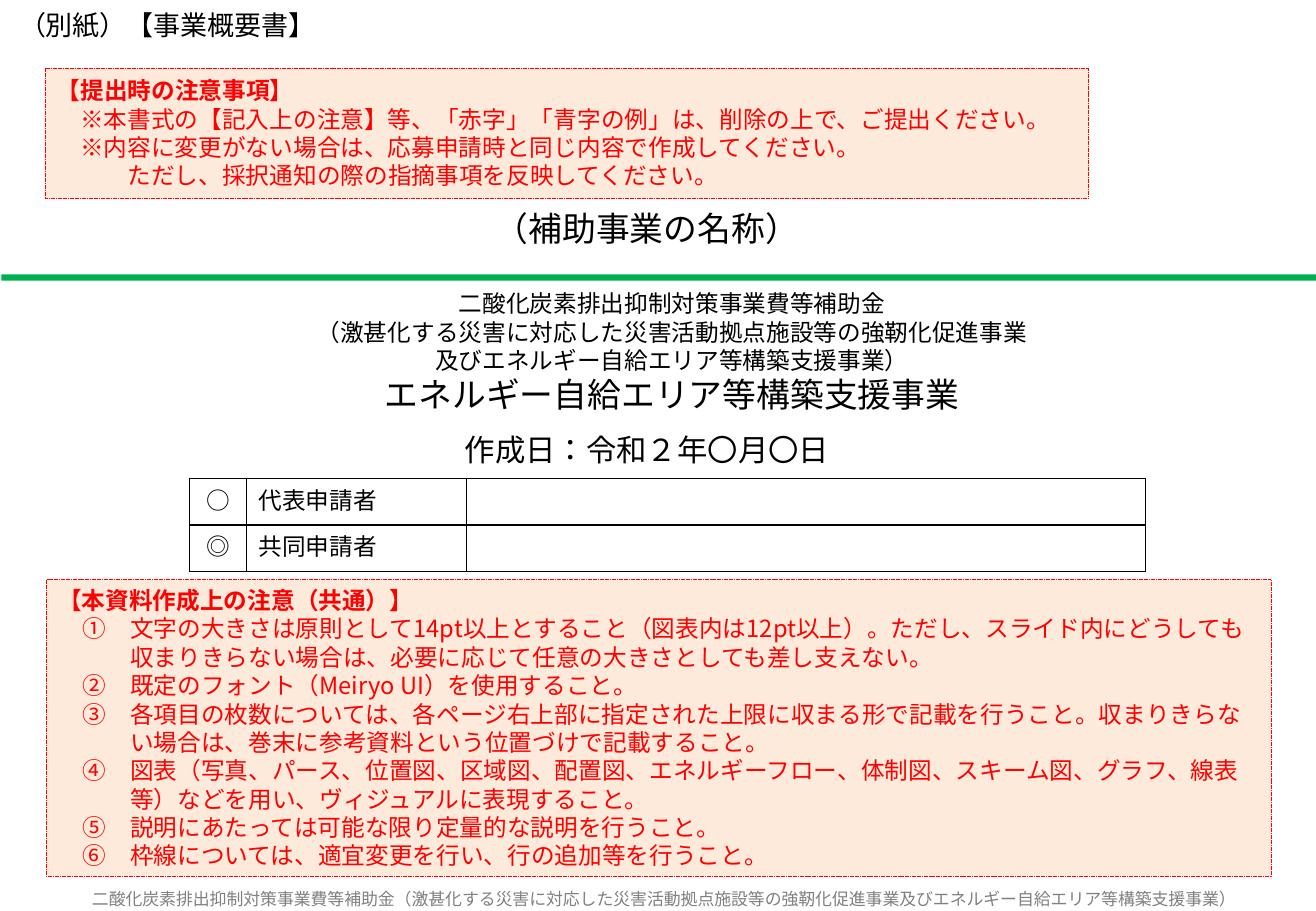
from dataclasses import dataclass

import pptx
import pptx.dml.color
import pptx.enum.dml
import pptx.enum.lang
import pptx.enum.shapes
import pptx.enum.text
import pptx.oxml.ns
import pptx.util
from lxml import etree

Cm = pptx.util.Cm
Pt = pptx.util.Pt
PP_ALIGN = pptx.enum.text.PP_ALIGN
MSO_ANCHOR = pptx.enum.text.MSO_ANCHOR
MSO_SHAPE = pptx.enum.shapes.MSO_SHAPE
qn = pptx.oxml.ns.qn

FONT = "Noto Sans CJK JP"
LINE_HEIGHT = 1.2
BLACK, RED, GRAY = "000000", "FF0000", "808080"
GREEN, CREAM = "00B050", "FDEADA"


@dataclass
class Para:
    text: str
    size: float = 14
    color: str = BLACK
    bold: bool = False
    center: bool = False
    left: float = 0
    hanging: float = 0
    numbered: bool = False


@dataclass
class Block:
    left: float
    top: float
    width: float
    height: float
    paras: list[Para]
    middle: bool = False


def rgb(color: str) -> pptx.dml.color.RGBColor:
    return pptx.dml.color.RGBColor.from_string(color)


def write(tf, paras: list[Para]) -> None:
    for i, para in enumerate(paras):
        p = tf.paragraphs[0] if i == 0 else tf.add_paragraph()
        p.alignment = PP_ALIGN.CENTER if para.center else PP_ALIGN.LEFT
        p.line_spacing = Pt(para.size * LINE_HEIGHT)
        pPr = p._p.get_or_add_pPr()
        if para.left:
            pPr.set("marL", str(Cm(para.left)))
            pPr.set("indent", str(-Cm(para.hanging)))
        if para.numbered:
            etree.SubElement(pPr, qn("a:buFont"), typeface=FONT)
            etree.SubElement(pPr, qn("a:buAutoNum"), type="circleNumDbPlain")
        r = p.add_run()
        r.text = para.text
        r.font.size = Pt(para.size)
        r.font.bold = para.bold
        r.font.color.rgb = rgb(para.color)
        r.font.name = FONT
        r.font.language_id = pptx.enum.lang.MSO_LANGUAGE_ID.JAPANESE
        etree.SubElement(r._r.get_or_add_rPr(), qn("a:ea"), typeface=FONT)


def fill_frame(sp, block: Block) -> None:
    tf = sp.text_frame
    tf.word_wrap = True
    tf.vertical_anchor = MSO_ANCHOR.MIDDLE if block.middle else MSO_ANCHOR.TOP
    write(tf, block.paras)


def add_text(s, block: Block) -> None:
    sp = s.shapes.add_textbox(Cm(block.left), Cm(block.top), Cm(block.width), Cm(block.height))
    fill_frame(sp, block)


def add_rect(s, left: float, top: float, width: float, height: float, color: str):
    sp = s.shapes.add_shape(MSO_SHAPE.RECTANGLE, Cm(left), Cm(top), Cm(width), Cm(height))
    sp.shadow.inherit = False
    sp.fill.solid()
    sp.fill.fore_color.rgb = rgb(color)
    sp.line.fill.background()
    return sp


def add_notice(s, block: Block) -> None:
    sp = add_rect(s, block.left, block.top, block.width, block.height, CREAM)
    sp.line.color.rgb = rgb(RED)
    sp.line.width = Pt(0.25)
    sp.line.dash_style = pptx.enum.dml.MSO_LINE.SQUARE_DOT
    fill_frame(sp, block)


def add_borders(cell) -> None:
    tcPr = cell._tc.get_or_add_tcPr()
    for i, side in enumerate(("lnL", "lnR", "lnT", "lnB")):
        ln = etree.Element(qn(f"a:{side}"), w=str(Pt(1)))
        fill = etree.SubElement(ln, qn("a:solidFill"))
        etree.SubElement(fill, qn("a:srgbClr"), val=BLACK)
        tcPr.insert(i, ln)


def add_applicants(s) -> None:
    rows = [("○", "代表申請者", ""), ("◎", "共同申請者", "")]
    widths = [1.19, 4.6, 14.2]
    row_height = 0.97
    frame = s.shapes.add_table(
        len(rows), len(widths), Cm(3.96), Cm(10.01), Cm(sum(widths)), Cm(row_height * len(rows))
    )
    table = frame.table
    table.first_row = table.horz_banding = False
    for column, width in zip(table.columns, widths):
        column.width = Cm(width)
    for i, row in enumerate(rows):
        table.rows[i].height = Cm(row_height)
        for j, text in enumerate(row):
            cell = table.cell(i, j)
            cell.margin_top = cell.margin_bottom = 0
            cell.vertical_anchor = MSO_ANCHOR.MIDDLE
            cell.fill.background()
            add_borders(cell)
            if text:
                write(cell.text_frame, [Para(text, center=j == 0)])


SUBMISSION = Block(0.94, 1.42, 21.82, 2.72, [
    Para("【提出時の注意事項】", color=RED, bold=True),
    Para("※本書式の【記入上の注意】等、「赤字」「青字の例」は、削除の上で、ご提出ください。", color=RED, left=0.49),
    Para("※内容に変更がない場合は、応募申請時と同じ内容で作成してください。", color=RED, left=0.49),
    Para("ただし、採択通知の際の指摘事項を反映してください。", color=RED, left=1.48),
], middle=True)

RULES = [
    "文字の大きさは原則として14pt以上とすること（図表内は12pt以上）。ただし、スライド内にどうしても収まりきらない場合は、必要に応じて任意の大きさとしても差し支えない。",
    "既定のフォント（Meiryo UI）を使用すること。",
    "各項目の枚数については、各ページ右上部に指定された上限に収まる形で記載を行うこと。収まりきらない場合は、巻末に参考資料という位置づけで記載すること。",
    "図表（写真、パース、位置図、区域図、配置図、エネルギーフロー、体制図、スキーム図、グラフ、線表等）などを用い、ヴィジュアルに表現すること。",
    "説明にあたっては可能な限り定量的な説明を行うこと。",
    "枠線については、適宜変更を行い、行の追加等を行うこと。",
]
PREPARATION = Block(0.97, 12.12, 25.6, 6.2, [
    Para("【本資料作成上の注意（共通）】", color=RED, bold=True),
    *(Para(rule, color=RED, left=1.5, hanging=1, numbered=True) for rule in RULES),
], middle=True)

TEXTS = [
    Block(0.18, 18.52, 27.38, 0.53, [
        Para("二酸化炭素排出抑制対策事業費等補助金（激甚化する災害に対応した災害活動拠点施設等の強靭化促進事業及びエネルギー自給エリア等構築支援事業）",
             size=10, color=GRAY, center=True),
    ], middle=True),
    Block(1.83, 3.61, 23.39, 2.31, [Para("（補助事業の名称）", size=20, center=True)], middle=True),
    Block(0.15, 0.05, 8.99, 0.94, [Para("（別紙）【事業概要書】", size=16)]),
    Block(4.55, 5.92, 19, 2.9, [
        Para("二酸化炭素排出抑制対策事業費等補助金", center=True),
        Para("（激甚化する災害に対応した災害活動拠点施設等の強靭化促進事業", center=True),
        Para("及びエネルギー自給エリア等構築支援事業）", center=True),
        Para("エネルギー自給エリア等構築支援事業", size=20, center=True),
    ]),
    Block(8.23, 8.89, 10.59, 1.02, [Para("作成日：令和２年〇月〇日", size=18, center=True)]),
]


def main() -> None:
    prs = pptx.Presentation()
    prs.slide_width, prs.slide_height = Cm(27.51), Cm(19.05)
    s = prs.slides.add_slide(prs.slide_layouts[6])
    add_rect(s, 0.03, 5.74, 27.48, 0.13, GREEN)
    add_applicants(s)
    for block in TEXTS:
        add_text(s, block)
    for block in (SUBMISSION, PREPARATION):
        add_notice(s, block)
    prs.save("out.pptx")


if __name__ == "__main__":
    main()
